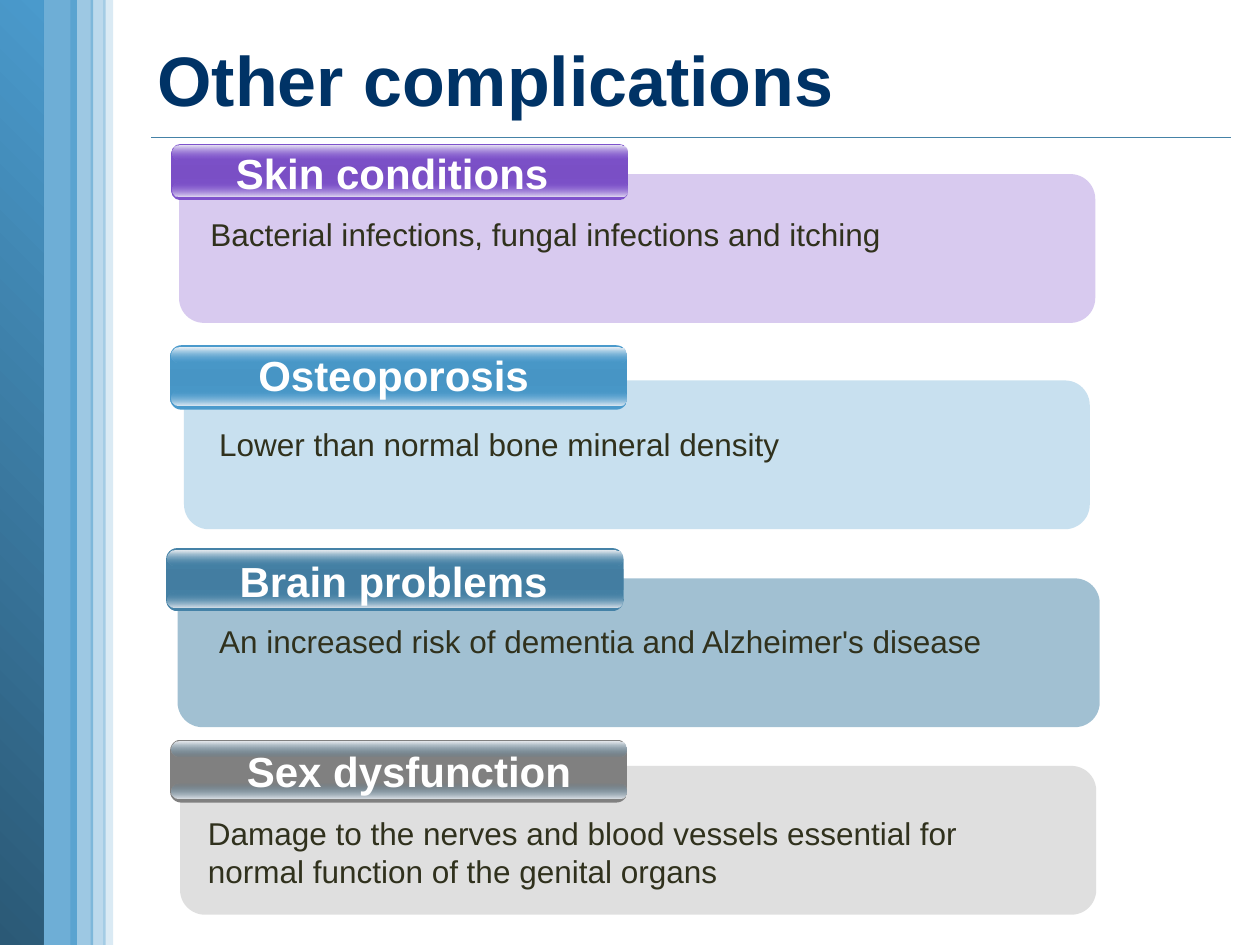
from dataclasses import dataclass

from lxml import etree
from pptx import Presentation
from pptx import util as u
from pptx.dml.color import RGBColor
from pptx.enum import shapes, text
from pptx.oxml import ns


@dataclass(frozen=True)
class Theme:
    font: str = "Arial"
    title_size: int = 40
    tab_size: int = 24
    body_size: int = 18
    navy: str = "003366"
    ink: str = "30311D"
    white: str = "FFFFFF"
    sky: str = "4A9ACC"
    deep_sky: str = "4795C5"
    night: str = "2B5976"
    steel: str = "4582A7"
    deep_steel: str = "437DA1"
    purple: str = "7E52CC"
    deep_purple: str = "7A4FC5"
    silver: str = "969696"
    gray: str = "808080"


@dataclass(frozen=True)
class Card:
    heading: str
    detail: str
    panel: tuple      # left, top, width
    panel_fill: tuple  # colour, opacity
    tab: tuple        # left, top, height
    tab_fill: tuple   # edge and middle colour
    gloss: tuple      # tint, top light, bottom light
    heading_at: tuple  # left, top, width
    detail_at: tuple  # left, top, width, height
    spacing: float = 1.1
    wrap_heading: bool = False


class SlideBuilder:
    def __init__(self, slide, theme):
        self.slide = slide
        self.theme = theme

    def block(self, parent, left, top, width, height, stops, angle=0, radius=None):
        """Borderless shape; stops are (position, colour, opacity)."""
        kind = shapes.MSO_SHAPE
        shape = parent.add_shape(
            kind.RECTANGLE if radius is None else kind.ROUNDED_RECTANGLE,
            u.Cm(left), u.Cm(top), u.Cm(width), u.Cm(height))
        if radius is not None:
            shape.adjustments[0] = radius
        shape.shadow.inherit = False
        shape.line.fill.background()
        shape.fill.background()
        properties = shape._element.spPr
        properties.replace(properties.find(ns.qn("a:noFill")),
                           self.paint(stops, angle))
        return shape

    def paint(self, stops, angle):
        if len(stops) == 1:
            fill = etree.Element(ns.qn("a:solidFill"))
            self.color(fill, *stops[0][1:])
            return fill
        fill = etree.Element(ns.qn("a:gradFill"), rotWithShape="1")
        stop_list = etree.SubElement(fill, ns.qn("a:gsLst"))
        for position, color, opacity in stops:
            stop = etree.SubElement(stop_list, ns.qn("a:gs"), pos=str(position * 1000))
            self.color(stop, color, opacity)
        etree.SubElement(fill, ns.qn("a:lin"), ang=str(angle * 60000), scaled="0")
        return fill

    def color(self, parent, value, opacity):
        node = etree.SubElement(parent, ns.qn("a:srgbClr"), val=value)
        if opacity < 100:
            etree.SubElement(node, ns.qn("a:alpha"), val=str(opacity * 1000))

    def rule(self, left, top, right, color):
        line = self.slide.shapes.add_connector(
            shapes.MSO_CONNECTOR.STRAIGHT,
            u.Cm(left), u.Cm(top), u.Cm(right), u.Cm(top))
        line.line.color.rgb = RGBColor.from_string(color)
        line.line.width = u.Pt(1)
        etree.SubElement(line._element.spPr, ns.qn("a:effectLst"))

    def add_span(self, para, words, size, color, bold=False):
        span = para.add_run()
        span.text = words
        span.font.name = self.theme.font
        span.font.size = u.Pt(size)
        span.font.bold = bold
        span.font.color.rgb = RGBColor.from_string(color)

    def title(self, words, left, top, width, height):
        box = self.slide.shapes.title
        box.left, box.top = u.Cm(left), u.Cm(top)
        box.width, box.height = u.Cm(width), u.Cm(height)
        box.text_frame.vertical_anchor = text.MSO_ANCHOR.MIDDLE
        para = box.text_frame.paragraphs[0]
        para.alignment = text.PP_ALIGN.LEFT
        self.add_span(para, words, self.theme.title_size, self.theme.navy, True)

    def label(self, left, top, width, height, wrap=True):
        box = self.slide.shapes.add_textbox(
            u.Cm(left), u.Cm(top), u.Cm(width), u.Cm(height))
        box.text_frame.word_wrap = wrap
        box.text_frame.auto_size = text.MSO_AUTO_SIZE.SHAPE_TO_FIT_TEXT
        return box.text_frame.paragraphs[0]

    def tab(self, card):
        """Glossy heading bar: body, lower light, upper light."""
        left, top, height = card.tab
        edge, middle = card.tab_fill
        tint, upper, lower = card.gloss
        gloss_height = 0.24 * height
        group = self.slide.shapes.add_group_shape().shapes
        self.block(group, left, top, 9.22, height,
                   [(0, edge, 100), (50, middle, 100), (100, edge, 100)], 90, 0.175)
        for gloss_top, stops in (
                (top + height - gloss_height - 0.08, [(0, tint, 0), (100, lower, 100)]),
                (top + 0.04, [(0, upper, 100), (100, tint, 0)])):
            self.block(group, left + 0.03, gloss_top, 9.17, gloss_height, stops, 90, 0.5)

    def card(self, card):
        theme = self.theme
        self.block(self.slide.shapes, *card.panel, 3, [(0, *card.panel_fill)],
                   radius=0.167)
        self.tab(card)
        para = self.label(*card.heading_at, 1.27, card.wrap_heading)
        para.alignment = text.PP_ALIGN.CENTER
        self.add_span(para, card.heading, theme.tab_size, theme.white, True)
        para = self.label(*card.detail_at)
        para.line_spacing = card.spacing
        self.add_span(para, card.detail, theme.body_size, theme.ink)


def main():
    theme = Theme()
    deck = Presentation()
    deck.slide_width, deck.slide_height = u.Cm(25.4), u.Cm(19.05)
    page = deck.slides.add_slide(deck.slide_layouts[5])
    builder = SlideBuilder(page, theme)

    # Title and side stripes
    builder.title("Other complications", 2.92, 0.18, 22.1, 2.82)
    builder.rule(3.05, 2.77, 24.82, theme.steel)
    for left, width, stops, angle in (
            (0.76, 0.79, [(0, theme.sky, 80)], 0),
            (-0.03, 0.91, [(0, theme.night, 100), (100, theme.sky, 100)], 315),
            (2.08, 0.2, [(0, theme.sky, 20)], 0),
            (1.42, 0.46, [(0, theme.sky, 54)], 0),
            (1.83, 0.3, [(0, theme.sky, 37)], 0)):
        builder.block(page.shapes, left, 0, width, 19.05, stops, angle)

    # Complication cards, top to bottom
    steel_gloss = (theme.steel, "EAEDF1", "E2E7ED")
    cards = (
        Card("Skin conditions",
             "Bacterial infections, fungal infections and itching",
             (3.61, 3.51, 18.47), (theme.purple, 30),
             (3.45, 2.9, 1.14), (theme.purple, theme.deep_purple),
             (theme.purple, "EAE7F5", "ECE9F6"),
             (4.5, 2.84, 6.81), (3.99, 4.14, 16.05, 1.09)),
        Card("Osteoporosis",
             "Lower than normal bone mineral density",
             (3.71, 7.67, 18.26), (theme.sky, 30),
             (3.43, 6.96, 1.3), (theme.sky, theme.deep_sky),
             (theme.sky, "EEF3F8", "EAF0F6"),
             (4.95, 6.93, 5.97), (4.17, 8.36, 16.05, 1.09)),
        Card("Brain problems",
             "An increased risk of dementia and Alzheimer's disease",
             (3.58, 11.66, 18.59), (theme.steel, 50),
             (3.35, 11.05, 1.27), (theme.steel, theme.deep_steel), steel_gloss,
             (4.57, 11.07, 6.73), (4.17, 12.34, 16.05, 1.09)),
        Card("Sex dysfunction",
             "Damage to the nerves and blood vessels essential for "
             "normal function of the genital organs",
             (3.63, 15.44, 18.47), (theme.silver, 30),
             (3.43, 14.91, 1.27), (theme.gray, theme.gray), steel_gloss,
             (4.22, 14.91, 8.05), (3.94, 16.28, 16.99, 1.78),
             spacing=1.0, wrap_heading=True),
    )
    for card in cards:
        builder.card(card)

    deck.save("out.pptx")


if __name__ == "__main__":
    main()
